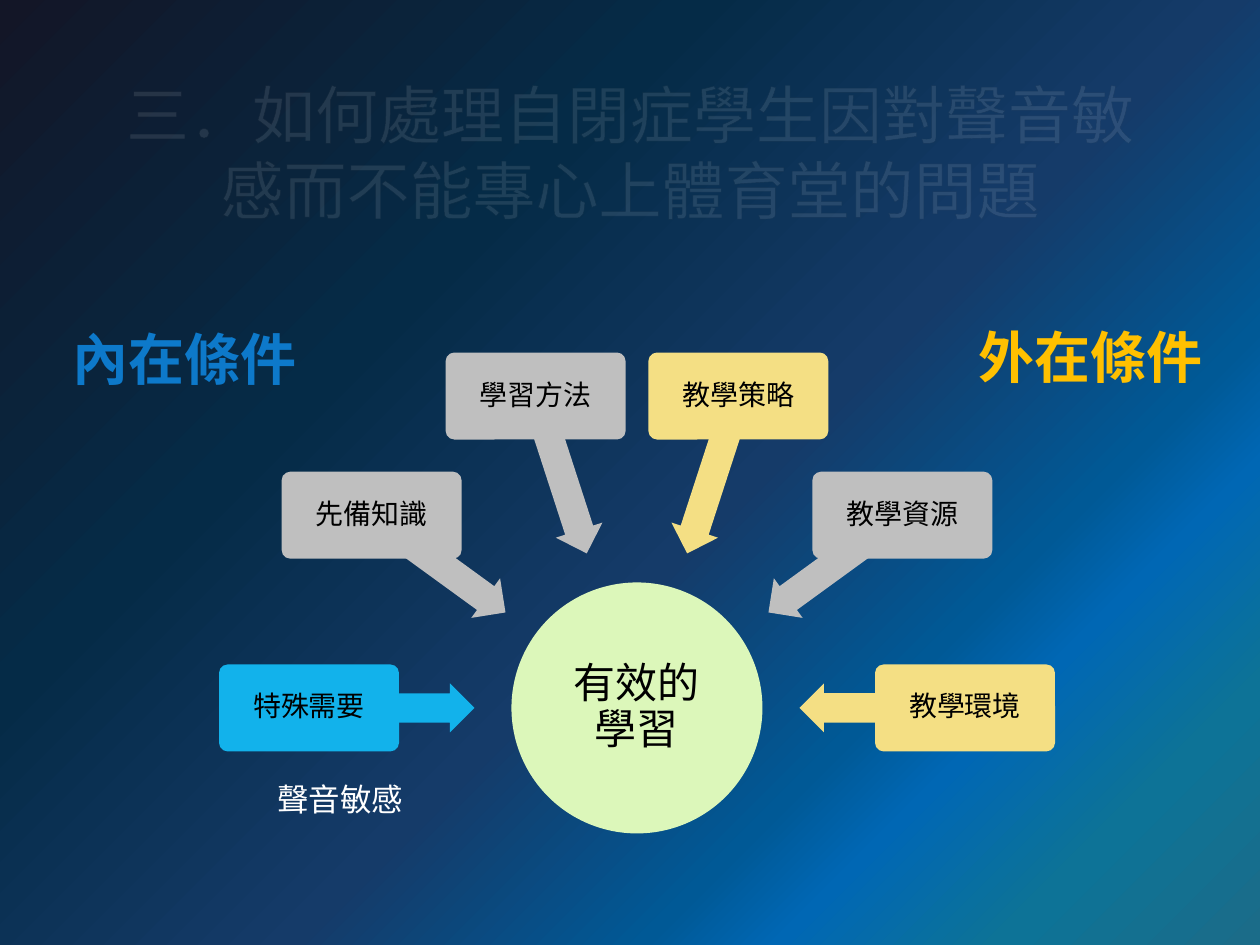
import math
from dataclasses import dataclass

import pptx
import pptx.dml.color
import pptx.enum.shapes
import pptx.enum.text
import pptx.oxml.ns
import pptx.util
from lxml import etree

SHAPE = pptx.enum.shapes.MSO_SHAPE
ALIGN = pptx.enum.text.PP_ALIGN
ANCHOR = pptx.enum.text.MSO_ANCHOR
FIT = pptx.enum.text.MSO_AUTO_SIZE
qn = pptx.oxml.ns.qn
SCALE = 914400 // 126


@dataclass(frozen=True)
class Theme:
    white: str = "FFFFFF"
    black: str = "000000"
    edge: str = "404040"
    hub: str = "DCF7BA"
    sky: str = "12B2EB"
    gray: str = "BFBFBF"
    sand: str = "F4DF84"
    inner: str = "0D79CA"
    outer: str = "FFC000"
    night: tuple = ((0, "131627"), (32, "052B47"), (56, "153B69"), (72, "005996"),
                    (78, "0067B4"), (88, "0D7397"), (100, "1B6C89"))
    head: str = "Calibri"
    body: str = "Lato"
    title: int = 36
    side: int = 32
    core: int = 24
    note: int = 18
    label: int = 16


def px(n):
    return pptx.util.Emu(round(n * SCALE))


def rgb(color):
    return pptx.dml.color.RGBColor.from_string(color)


def node(parent, tag, **attrs):
    return etree.SubElement(parent, qn(tag), attrs)


class Deck:
    def __init__(self, theme):
        self.theme = theme
        self.file = pptx.Presentation()
        self.file.slide_width, self.file.slide_height = px(1260), px(945)
        self.slide = self.file.slides.add_slide(self.file.slide_layouts[6])

    def ground(self, stops):
        """Fill the background with a gradient that spreads from the top left."""
        self.slide.background.fill.gradient()
        grad = self.slide.element.find(".//" + qn("a:gradFill"))
        for child in list(grad):
            grad.remove(child)
        row = node(grad, "a:gsLst")
        for place, color in stops:
            stop = node(row, "a:gs", pos=str(place * 1000))
            node(stop, "a:srgbClr", val=color)
        way = node(grad, "a:path", path="circle")
        node(way, "a:fillToRect", r="100000", b="100000")

    def add_run(self, frame, text, size, font, color, bold=False):
        para = frame.paragraphs[0]
        run = para.add_run()
        run.text = text
        run.font.size = pptx.util.Pt(size)
        run.font.name = font
        run.font.bold = bold
        run.font.color.rgb = rgb(color)
        return para, run

    def text(self, box, text, size, font, color, bold=False, wrap=True):
        frame = self.slide.shapes.add_textbox(*map(px, box)).text_frame
        frame.word_wrap = wrap
        frame.auto_size = FIT.SHAPE_TO_FIT_TEXT
        self.add_run(frame, text, size, font, color, bold)

    def title(self, box, text):
        look = self.theme
        frame = self.slide.shapes.add_textbox(*map(px, box)).text_frame
        frame.word_wrap = True
        frame.vertical_anchor = ANCHOR.MIDDLE
        para, run = self.add_run(frame, text, look.title, look.head, look.white)
        para.alignment = ALIGN.CENTER
        line = etree.Element(qn("a:ln"), w=str(int(pptx.util.Pt(0.75))))
        tint = node(node(line, "a:solidFill"), "a:srgbClr", val=look.edge)
        node(tint, "a:alpha", val="10000")
        run.font._element.insert(0, line)

    def shape(self, kind, mid, size, fill):
        """Place a plain preset shape by its centre."""
        (x, y), (w, h) = mid, size
        item = self.slide.shapes.add_shape(kind, px(x - w / 2), px(y - h / 2), px(w), px(h))
        item.shadow.inherit = False
        item.fill.solid()
        item.fill.fore_color.rgb = rgb(fill)
        item.line.fill.background()
        return item

    def label(self, item, text, size, inset):
        frame = item.text_frame
        frame.word_wrap = True
        frame.vertical_anchor = ANCHOR.MIDDLE
        frame.margin_left = frame.margin_right = px(inset)
        frame.margin_top = frame.margin_bottom = px(inset)
        para, _ = self.add_run(frame, text, size, self.theme.body, self.theme.black)
        para.alignment = ALIGN.CENTER
        para.line_spacing = 0.9
        para.space_after = pptx.util.Pt(round(size * 0.35))

    def hub(self, mid, size, text):
        item = self.shape(SHAPE.OVAL, mid, (size, size), self.theme.hub)
        self.label(item, text, self.theme.core, 15)

    def spoke(self, hub, angle, text, fill):
        """Add a box on the ring round the hub, with an arrow to the hub."""
        turn = math.radians(angle)

        def spot(reach):
            return hub[0] + reach * math.cos(turn), hub[1] - reach * math.sin(turn)

        arrow = self.shape(SHAPE.LEFT_ARROW, spot(232), (139, 49), fill)
        arrow.adjustments[0], arrow.adjustments[1] = 0.6, 0.5
        arrow.rotation = -angle % 360
        box = self.shape(SHAPE.ROUNDED_RECTANGLE, spot(328), (180, 87), fill)
        box.adjustments[0] = 0.1
        self.label(box, text, self.theme.label, 6)


def main():
    look = Theme()
    deck = Deck(look)
    deck.ground(look.night)
    deck.title((95, 84, 1070, 134), "三．如何處理自閉症學生因對聲音敏感而不能專心上體育堂的問題")

    hub = (637, 708)
    deck.hub(hub, 251, "有效的學習")
    spokes = (("特殊需要", look.sky), ("先備知識", look.gray), ("學習方法", look.gray),
              ("教學策略", look.sand), ("教學資源", look.gray), ("教學環境", look.sand))
    for i, (text, fill) in enumerate(spokes):
        deck.spoke(hub, 180 - 36 * i, text, fill)

    deck.text((60, 318, 253, 81), "內在條件", look.side, look.head, look.inner, bold=True)
    deck.text((966, 316, 253, 81), "外在條件", look.side, look.head, look.outer, bold=True)
    deck.text((265, 774, 152, 50), "聲音敏感", look.note, look.body, look.white, wrap=False)
    deck.file.save("out.pptx")


if __name__ == "__main__":
    main()
